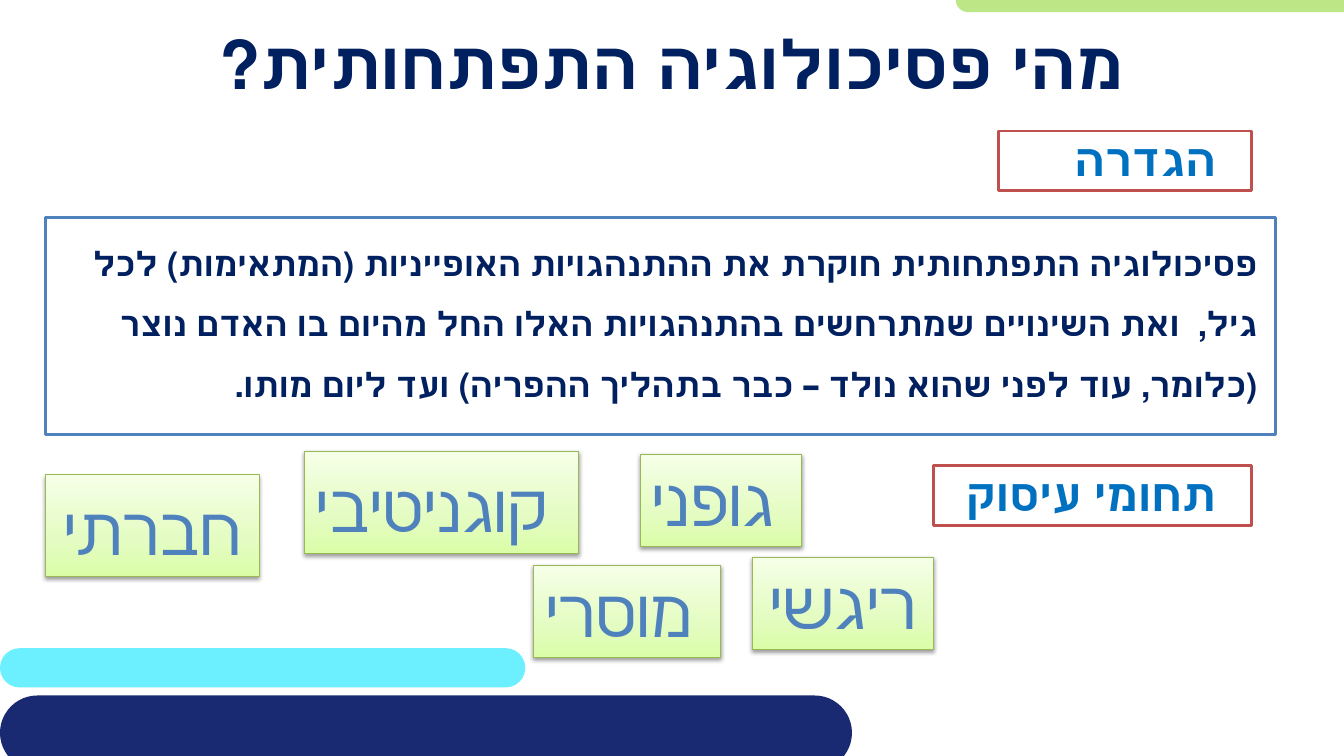
import pptx
import pptx.dml.color
import pptx.enum.shapes
import pptx.enum.text
import pptx.oxml
import pptx.oxml.ns
import pptx.util

WIDTH, HEIGHT = 13.33, 7.5
COLORS = {
    "white": "FFFFFF", "aqua": "6CF0FF", "lime": "BDE686", "indigo": "192A72",
    "navy": "002060", "azure": "0070C0", "blue": "4F81BD", "red": "C0504D",
    "olive": "98B955", "card_base": "DAFDA7", "card_middle": "E4FCC2",
    "card_top": "F5FFE7", "black": "000000",
}
CARD_STOPS = ((0, "card_base"), (35, "card_middle"), (100, "card_top"))

TITLE = {"size": 48, "bold": True, "color": "navy", "name": "Quicksand"}
HEADING = {"size": 32, "bold": True, "color": "azure", "name": "Quicksand"}
BODY = {"size": 24, "bold": True, "color": "navy", "name": "Quicksand"}
CARD = {"size": 48, "color": "blue", "name": "Arial"}

SHAPES = pptx.enum.shapes.MSO_SHAPE
ALIGN = pptx.enum.text.PP_ALIGN
ANCHOR = pptx.enum.text.MSO_ANCHOR


class Deck:
    """Holds the style and the current slide; boxes are in columns and rows of one inch."""

    def __init__(self):
        self.prs = pptx.Presentation()
        self.prs.slide_width = self.unit(WIDTH)
        self.prs.slide_height = self.unit(HEIGHT)
        self.s = self.prs.slides.add_slide(self.prs.slide_layouts[6])

    def unit(self, cells):
        return pptx.util.Inches(cells)

    def color(self, name):
        return pptx.dml.color.RGBColor.from_string(COLORS[name])

    def shape(self, kind, box, fill, line=None, weight=2):
        sp = self.s.shapes.add_shape(kind, *map(self.unit, box))
        sp.shadow.inherit = False
        if fill:
            sp.fill.solid()
            sp.fill.fore_color.rgb = self.color(fill)
        if line:
            sp.line.color.rgb = self.color(line)
            sp.line.width = pptx.util.Pt(weight)
        else:
            sp.line.fill.background()
        return sp

    def bar(self, box, fill):
        sp = self.shape(SHAPES.ROUNDED_RECTANGLE, box, fill)
        sp.adjustments[0] = 0.5

    def put_text(self, sp, runs, align, anchor=ANCHOR.TOP, rtl=True, wrap=True, **spacing):
        """Fill a shape with one paragraph of (text, font format) runs."""
        tf = sp.text_frame
        tf.word_wrap, tf.vertical_anchor = wrap, anchor
        p = tf.paragraphs[0]
        p.alignment = align
        for key, value in spacing.items():
            setattr(p, key, value)
        if rtl:
            p._p.get_or_add_pPr().set("rtl", "1")
        for text, style in runs:
            r = p.add_run()
            r.text = text
            for key, value in style.items():
                if key == "color":
                    r.font.color.rgb = self.color(value)
                else:
                    setattr(r.font, key, pptx.util.Pt(value) if key == "size" else value)
        return p

    def indent(self, p, margin, hanging=0):
        pPr = p._p.get_or_add_pPr()
        pPr.set("marL", str(self.unit(margin)))
        pPr.set("indent", str(self.unit(hanging)))

    def title(self, box, text):
        sp = self.s.shapes.add_textbox(*map(self.unit, box))
        self.put_text(sp, [(text, TITLE)], ALIGN.CENTER, ANCHOR.MIDDLE)

    def heading(self, box, text):
        sp = self.shape(SHAPES.RECTANGLE, box, "white", "red")
        p = self.put_text(sp, [(text, HEADING)], ALIGN.RIGHT, ANCHOR.BOTTOM,
                          space_before=pptx.util.Pt(6.4))
        self.indent(p, 0.5, -0.25)

    def definition(self, box, text):
        sp = self.shape(SHAPES.RECTANGLE, box, "white", "blue")
        p = self.put_text(sp, [(text, BODY)], ALIGN.RIGHT, line_spacing=1.5)
        self.indent(p, 0.08)

    def card(self, box, word, gap_size):
        """Draw a shaded label; gap_size is the size of the space after its word."""
        sp = self.shape(SHAPES.RECTANGLE, box, None, "olive", 0.75)
        sp.fill.gradient()
        qn, parse_xml = pptx.oxml.ns.qn, pptx.oxml.parse_xml
        namespace = pptx.oxml.ns.nsdecls("a")
        stops = "".join(f'<a:gs pos="{at * 1000}"><a:srgbClr val="{COLORS[name]}"/></a:gs>'
                        for at, name in CARD_STOPS)
        spPr = sp._element.spPr
        grad = spPr.find(qn("a:gradFill"))
        grad.replace(grad.find(qn("a:gsLst")),
                     parse_xml(f"<a:gsLst {namespace}>{stops}</a:gsLst>"))
        grad.find(qn("a:lin")).set("ang", str(270 * 60000))
        spPr.find(qn("a:effectLst")).append(parse_xml(
            f'<a:outerShdw {namespace} blurRad="{pptx.util.Pt(3.1)}" '
            f'dist="{pptx.util.Pt(1.6)}" dir="5400000" rotWithShape="0">'
            f'<a:srgbClr val="{COLORS["black"]}"><a:alpha val="38000"/></a:srgbClr>'
            '</a:outerShdw>'))
        runs = [(word, CARD), (" ", {**CARD, "size": gap_size})]
        self.put_text(sp, runs, ALIGN.CENTER, rtl=False, wrap=False)
        sp.text_frame.auto_size = pptx.enum.text.MSO_AUTO_SIZE.SHAPE_TO_FIT_TEXT


def main():
    deck = Deck()
    for box, fill in (((0, 6.43, 5.21, 0.39), "aqua"),
                      ((9.48, -0.12, 5.8, 0.24), "lime"),
                      ((0, 6.9, 8.45, 0.74), "indigo")):
        deck.bar(box, fill)
    deck.title((0.56, 0.23, 12.2, 0.79), "מהי פסיכולוגיה התפתחותית?")
    deck.heading((9.9, 1.3, 2.51, 0.59), "הגדרה")
    deck.definition(
        (0.45, 2.16, 12.2, 2.15),
        "פסיכולוגיה התפתחותית חוקרת את ההתנהגויות האופייניות (המתאימות) לכל גיל,  "
        "ואת השינויים שמתרחשים בהתנהגויות האלו החל מהיום בו האדם נוצר "
        "(כלומר, עוד לפני שהוא נולד – כבר בתהליך ההפריה) ועד ליום מותו.")
    deck.heading((9.26, 4.62, 3.15, 0.59), "תחומי עיסוק")
    for box, word, gap_size in (((6.35, 4.51, 1.6, 0.91), "גופני", 48),
                                ((3.02, 4.48, 2.72, 1.01), "קוגניטיבי", 54),
                                ((0.45, 4.71, 2.12, 1.01), "חברתי", 54),
                                ((5.29, 5.61, 1.86, 0.91), "מוסרי", 48),
                                ((7.46, 5.53, 1.8, 0.91), "ריגשי", 48)):
        deck.card(box, word, gap_size)
    deck.prs.save("out.pptx")


if __name__ == "__main__":
    main()
